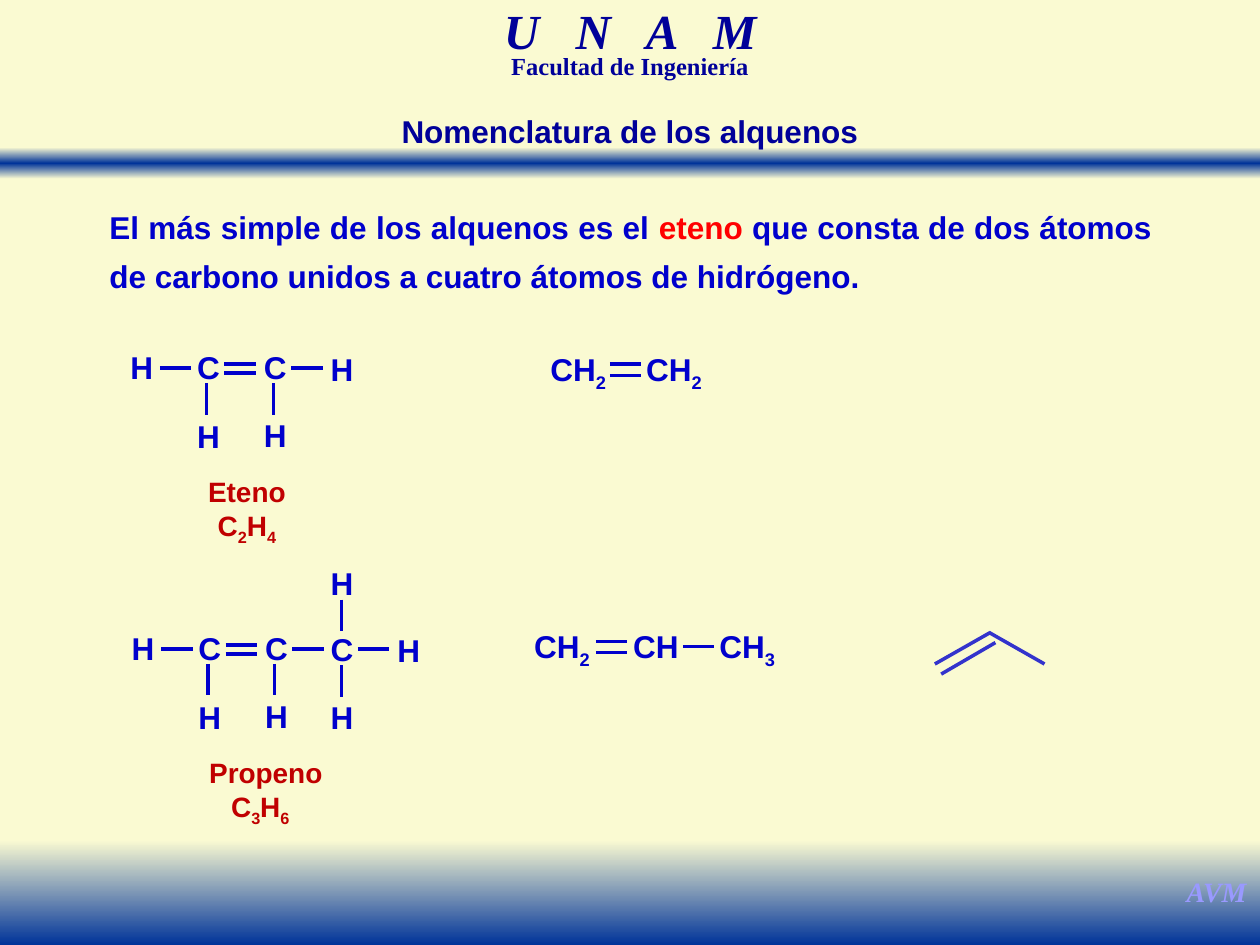
from copy import deepcopy
from dataclasses import dataclass
from itertools import groupby

from pptx import Presentation
from pptx.dml.color import RGBColor
from pptx.enum.shapes import MSO_CONNECTOR, MSO_SHAPE
from pptx.enum.text import MSO_ANCHOR, PP_ALIGN
from pptx.oxml.ns import qn
from pptx.util import Inches, Pt
from lxml.etree import SubElement


@dataclass(frozen=True)
class Theme:
    cream: str = "FAFAD2"
    band: str = "003399"
    navy: str = "000099"
    blue: str = "0000CC"
    skeleton: str = "3333CC"
    red: str = "FF0000"
    caption: str = "C00000"
    signature: str = "9999FF"
    sans: str = "Arial"
    serif: str = "Times New Roman"
    banner: int = 28
    body: int = 18
    small: int = 16
    faculty: int = 14
    line: int = 2


T = Theme()
W, H = 10, 7.5
BOND = 0.25       # length of every drawn bond
STEP = 0.53       # distance between neighbouring atoms
ATOM = (0.39, 0.4)


def gradient_bar(s, top, height, colors):
    """Full-width bar, colours spread evenly from top to bottom."""
    bar = s.shapes.add_shape(MSO_SHAPE.RECTANGLE, 0, Inches(top), Inches(W), Inches(height))
    bar.shadow.inherit = False
    bar.line.fill.background()
    bar.fill.gradient()
    bar.fill.gradient_angle = 270
    stops = bar._element.spPr.find(qn("a:gradFill")).find(qn("a:gsLst"))
    for _ in colors[2:]:
        stops.append(deepcopy(stops[0]))
    for i, (stop, color) in enumerate(zip(bar.fill.gradient_stops, colors)):
        stop.position = i / (len(colors) - 1)
        stop.color.rgb = RGBColor.from_string(color)


def text(s, box, runs, size, color, font=T.sans, italic=False,
         align=PP_ALIGN.CENTER, spacing=None, wrap=False):
    """Bold one-paragraph box; runs are (text, extra rPr attributes, colour or None)."""
    tb = s.shapes.add_textbox(*map(Inches, box))
    tf = tb.text_frame
    tf.word_wrap = wrap
    tf.vertical_anchor = MSO_ANCHOR.TOP
    p = tf.paragraphs[0]
    p.alignment = align
    if spacing:
        p.line_spacing = spacing
    for words, attributes, own_color in runs:
        r = p.add_run()
        r.text = words
        r.font.name, r.font.size = font, Pt(size)
        r.font.bold, r.font.italic = True, italic
        r.font.color.rgb = RGBColor.from_string(own_color or color)
        for name, value in attributes.items():
            r._r.get_or_add_rPr().set(name, value)


def plain(words):
    return [(words, {}, None)]


def formula(s, box, symbol, size=T.body, color=T.blue):
    """Chemical symbol whose digits are subscripts."""
    runs = [("".join(part), {"baseline": "-25000"} if digit else {}, None)
            for digit, part in groupby(symbol, str.isdigit)]
    text(s, box, runs, size, color)


def line(s, x1, y1, x2, y2, color=T.blue):
    c = s.shapes.add_connector(MSO_CONNECTOR.STRAIGHT, *map(Inches, (x1, y1, x2, y2)))
    c.line.color.rgb = RGBColor.from_string(color)
    c.line.width = Pt(T.line)
    SubElement(c._element.spPr, qn("a:effectLst"))


def bond(s, x, y):
    line(s, x, y, x + BOND, y)


def double_bond(s, x, y, gap):
    bond(s, x, y)
    bond(s, x, y + gap)


def upright_bond(s, x, y):
    line(s, x, y, x, y + BOND)


def vinyl_unit(s, x, y):
    """H-C=C- with one hydrogen below each carbon."""
    for symbol, col, dy in (("H", 0, 0), ("C", 1, 0), ("C", 2, 0), ("H", 1, 0.55), ("H", 2, 0.54)):
        formula(s, (x + col * STEP, y + dy, *ATOM), symbol)
    bond(s, x + 0.34, y + 0.21)
    double_bond(s, x + 0.85, y + 0.18, 0.07)
    bond(s, x + 1.38, y + 0.21)
    for col in (1, 2):
        upright_bond(s, x + 0.18 + col * STEP, y + 0.33)


def methyl_end(s, x, y):
    """Third carbon with its three hydrogens."""
    for symbol, dx, dy in (("C", 0, 0), ("H", 0, 0.54), ("H", STEP, 0.01), ("H", 0, -0.52)):
        formula(s, (x + dx, y + dy, *ATOM), symbol)
    bond(s, x + 0.32, y + 0.2)
    for dy in (-0.19, 0.33):
        upright_bond(s, x + 0.19, y + dy)


def caption(s, center, top, name, symbol):
    for dy, label in ((0, name), (0.27, symbol)):
        formula(s, (center - 0.55, top + dy, 1.1, 0.37), label, T.small, T.caption)


def header_and_footer(s):
    gradient_bar(s, 1.17, 0.25, (T.cream, T.band, T.cream))
    text(s, (3.04, 0.08, 3.92, 0.43), [("U N A ", {"spc": "700"}, None), ("M", {}, None)],
         T.banner, T.navy, T.serif, italic=True, spacing=0.7, wrap=True)
    text(s, (3.21, 0.42, 3.58, 0.26), plain("Facultad de Ingeniería"),
         T.faculty, T.navy, T.serif, spacing=0.7, wrap=True)
    gradient_bar(s, 6.67, H - 6.67, (T.cream, T.band))
    text(s, (9.31, 6.89, 0.69, 0.37), plain("AVM"), T.small, T.signature, T.serif, italic=True)
    text(s, (3.07, 0.84, 3.86, 0.4), plain("Nomenclatura de los alquenos"), T.body, T.navy)


def ethene(s):
    vinyl_unit(s, 0.93, 2.71)
    formula(s, (2.52, 2.73, *ATOM), "H")
    caption(s, 1.96, 3.72, "Eteno", "C2H4")
    # Condensed formula
    for x in (4.26, 5.02):
        formula(s, (x, 2.73, 0.66, 0.4), "CH2")
    double_bond(s, 4.84, 2.89, 0.09)


def propene(s):
    vinyl_unit(s, 0.94, 4.94)
    methyl_end(s, 2.52, 4.95)
    caption(s, 2.11, 5.95, "Propeno", "")
    formula(s, (1.72, 6.22, 0.69, 0.37), "C3H6", T.small, T.caption)
    # Condensed formula
    for x, width, symbol in ((4.13, 0.66, "CH2"), (4.92, 0.57, "CH"), (5.6, 0.66, "CH3")):
        formula(s, (x, 4.93, width, 0.4), symbol)
    double_bond(s, 4.73, 5.09, 0.09)
    bond(s, 5.42, 5.13)
    # Skeletal formula
    for x1, y1, x2, y2 in ((7.42, 5.27, 7.86, 5.02), (8.29, 5.27, 7.85, 5.02),
                           (7.47, 5.35, 7.9, 5.1)):
        line(s, x1, y1, x2, y2, T.skeleton)


def main():
    prs = Presentation()
    prs.slide_width, prs.slide_height = Inches(W), Inches(H)
    s = prs.slides.add_slide(prs.slide_layouts[6])
    s.background.fill.solid()
    s.background.fill.fore_color.rgb = RGBColor.from_string(T.cream)
    header_and_footer(s)
    # Introduction
    text(s, (0.77, 1.51, 8.47, 0.89),
         [("El más simple de los alquenos es el ", {}, None), ("eteno ", {}, T.red),
          ("que consta de dos átomos de carbono unidos a cuatro átomos de hidrógeno.", {}, None)],
         T.body, T.blue, align=PP_ALIGN.JUSTIFY, spacing=1.3, wrap=True)
    # Molecules
    ethene(s)
    propene(s)
    prs.save("out.pptx")


if __name__ == "__main__":
    main()
